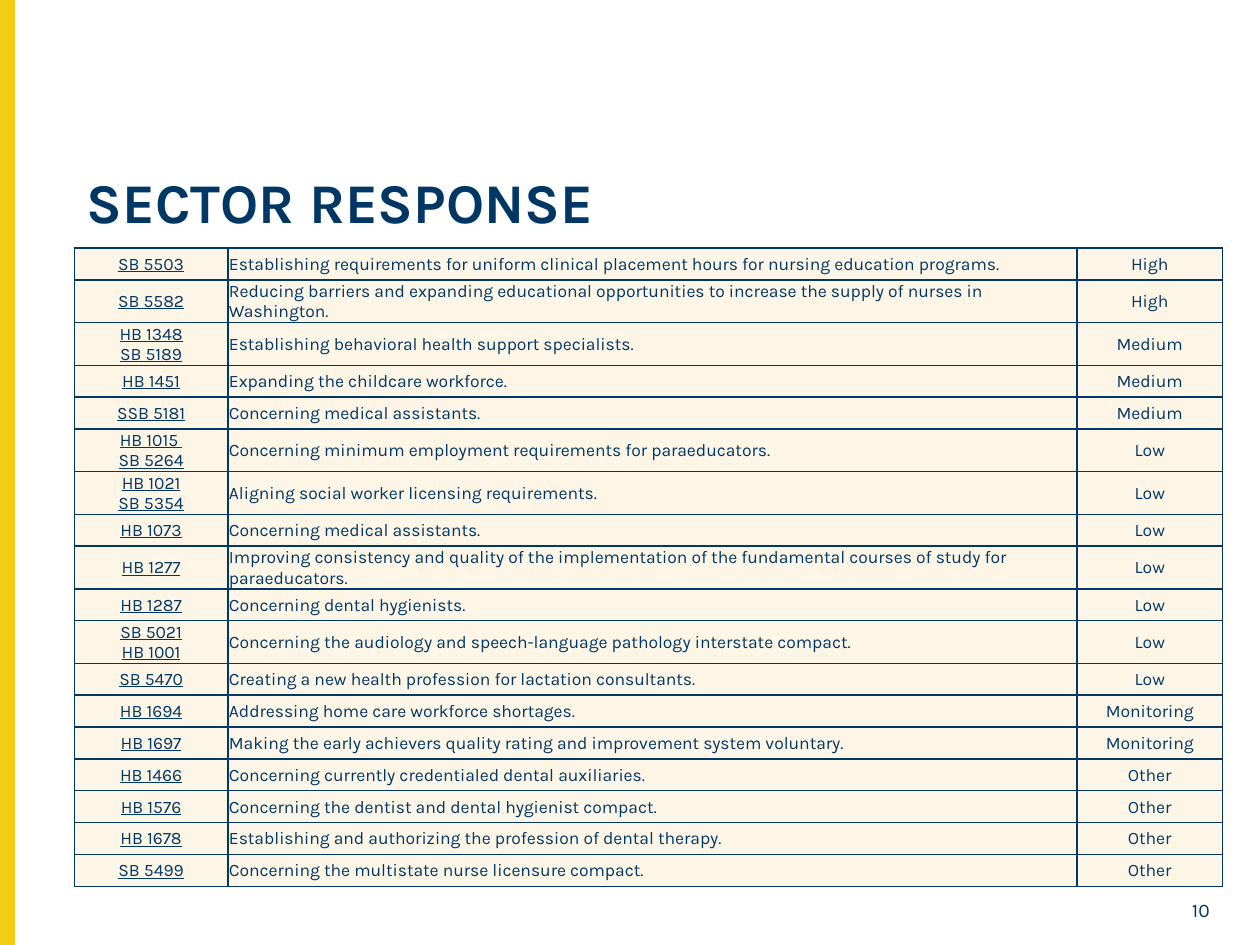
from pptx import Presentation
from pptx.dml.color import RGBColor
from pptx.enum.shapes import MSO_SHAPE
from pptx.enum.text import MSO_ANCHOR, PP_ALIGN
from pptx.oxml import parse_xml
from pptx.oxml.ns import nsdecls
from pptx.util import Pt

COLORS = {"navy": "003764", "gold": "F4CE12", "cream": "FDF6E7"}
FONT = "Karla"
ONE_LINE_ROW, TWO_LINE_ROW = 18.2, 24.4
COLUMN_WIDTHS = (87.7, 485.4, 82.9)
COLUMN_FORMATS = (
    {"alignment": PP_ALIGN.CENTER, "underline": True},
    {"alignment": PP_ALIGN.LEFT},
    {"alignment": PP_ALIGN.CENTER},
)
WRAP_LENGTH = 100  # longer descriptions take two lines

BILLS = [
    ("SB 5503", "Establishing requirements for uniform clinical placement hours "
     "for nursing education programs.", "High"),
    ("SB 5582", "Reducing barriers and expanding educational opportunities "
     "to increase the supply of nurses in Washington.", "High"),
    ("HB 1348\nSB 5189", "Establishing behavioral health support specialists.", "Medium"),
    ("HB 1451", "Expanding the childcare workforce.", "Medium"),
    ("SSB 5181", "Concerning medical assistants.", "Medium"),
    ("HB 1015 \nSB 5264", "Concerning minimum employment requirements for paraeducators.", "Low"),
    ("HB 1021\nSB 5354", "Aligning social worker licensing requirements.", "Low"),
    ("HB 1073", "Concerning medical assistants.", "Low"),
    ("HB 1277", "Improving consistency and quality of the implementation "
     "of the fundamental courses of study for paraeducators.", "Low"),
    ("HB 1287", "Concerning dental hygienists.", "Low"),
    ("SB 5021\nHB 1001", "Concerning the audiology and speech-language pathology "
     "interstate compact.", "Low"),
    ("SB 5470", "Creating a new health profession for lactation consultants.", "Low"),
    ("HB 1694", "Addressing home care workforce shortages.", "Monitoring"),
    ("HB 1697", "Making the early achievers quality rating and improvement "
     "system voluntary.", "Monitoring"),
    ("HB 1466", "Concerning currently credentialed dental auxiliaries.", "Other"),
    ("HB 1576", "Concerning the dentist and dental hygienist compact.", "Other"),
    ("HB 1678", "Establishing and authorizing the profession of dental therapy.", "Other"),
    ("SB 5499", "Concerning the multistate nurse licensure compact.", "Other"),
]


def color(name):
    return RGBColor.from_string(COLORS[name])


def format_paragraph(paragraph, size, alignment=PP_ALIGN.LEFT, **font_values):
    paragraph.alignment = alignment
    for key, value in {"name": FONT, "size": Pt(size), **font_values}.items():
        setattr(paragraph.font, key, value)
    paragraph.font.color.rgb = color("navy")


def add_side_bar(slide, left, top, width, height):
    bar = slide.shapes.add_shape(
        MSO_SHAPE.RECTANGLE, Pt(left), Pt(top), Pt(width), Pt(height))
    bar.shadow.inherit = False
    bar.fill.solid()
    bar.fill.fore_color.rgb = color("gold")
    bar.line.color.rgb = color("gold")
    bar.line.width = Pt(1)


def place_title(slide, left, top, width, height):
    title = slide.shapes.title
    box = {"left": left, "top": top, "width": width, "height": height}
    for key, value in box.items():
        setattr(title, key, Pt(value))
    frame = title.text_frame
    frame.text = "SECTOR RESPONSE"
    frame.vertical_anchor = MSO_ANCHOR.MIDDLE
    heading = frame.paragraphs[0]
    heading.line_spacing = 0.9
    format_paragraph(heading, 32, bold=True)


def add_page_number(slide, left, top, width, height):
    frame = slide.shapes.add_textbox(
        Pt(left), Pt(top), Pt(width), Pt(height)).text_frame
    frame.word_wrap = True
    frame.vertical_anchor = MSO_ANCHOR.MIDDLE
    frame.text = "10"
    format_paragraph(frame.paragraphs[0], 11, PP_ALIGN.RIGHT)


def add_cell_borders(cell):
    properties = cell._tc.get_or_add_tcPr()
    for position, side in enumerate(("lnL", "lnR", "lnT", "lnB")):
        properties.insert(position, parse_xml(
            f'<a:{side} {nsdecls("a")} w="{Pt(1)}"><a:solidFill>'
            f'<a:srgbClr val="{COLORS["navy"]}"/></a:solidFill></a:{side}>'))


def fill_cell(cell, text, text_format):
    cell_format = {
        "text": text, "vertical_anchor": MSO_ANCHOR.MIDDLE,
        "margin_left": Pt(0.7), "margin_right": Pt(0.7),
        "margin_top": Pt(0.7), "margin_bottom": Pt(0),
    }
    for key, value in cell_format.items():
        setattr(cell, key, value)
    cell.fill.solid()
    cell.fill.fore_color.rgb = color("cream")
    for paragraph in cell.text_frame.paragraphs:
        format_paragraph(paragraph, 10, **text_format)
    add_cell_borders(cell)


def add_bill_table(slide, left, top):
    heights = [
        TWO_LINE_ROW if "\n" in numbers or len(description) > WRAP_LENGTH
        else ONE_LINE_ROW
        for numbers, description, _ in BILLS
    ]
    table = slide.shapes.add_table(
        len(BILLS), len(COLUMN_WIDTHS), Pt(left), Pt(top),
        Pt(sum(COLUMN_WIDTHS)), Pt(sum(heights))).table
    table.first_row = table.horz_banding = False
    for column, width in zip(table.columns, COLUMN_WIDTHS):
        column.width = Pt(width)
    for row, height, bill in zip(table.rows, heights, BILLS):
        row.height = Pt(height)
        for cell, text, text_format in zip(row.cells, bill, COLUMN_FORMATS):
            fill_cell(cell, text, text_format)


def main():
    presentation = Presentation()
    presentation.slide_width, presentation.slide_height = Pt(720), Pt(540)
    slide = presentation.slides.add_slide(presentation.slide_layouts[5])

    # Gold edge, heading, bills and page number
    add_side_bar(slide, 0, 0, 8, 540)
    place_title(slide, 42.5, 98, 656.6, 38.2)
    add_bill_table(slide, 42.5, 141.8)
    add_page_number(slide, 661.7, 510.5, 36.7, 18.7)

    presentation.save("out.pptx")


if __name__ == "__main__":
    main()
